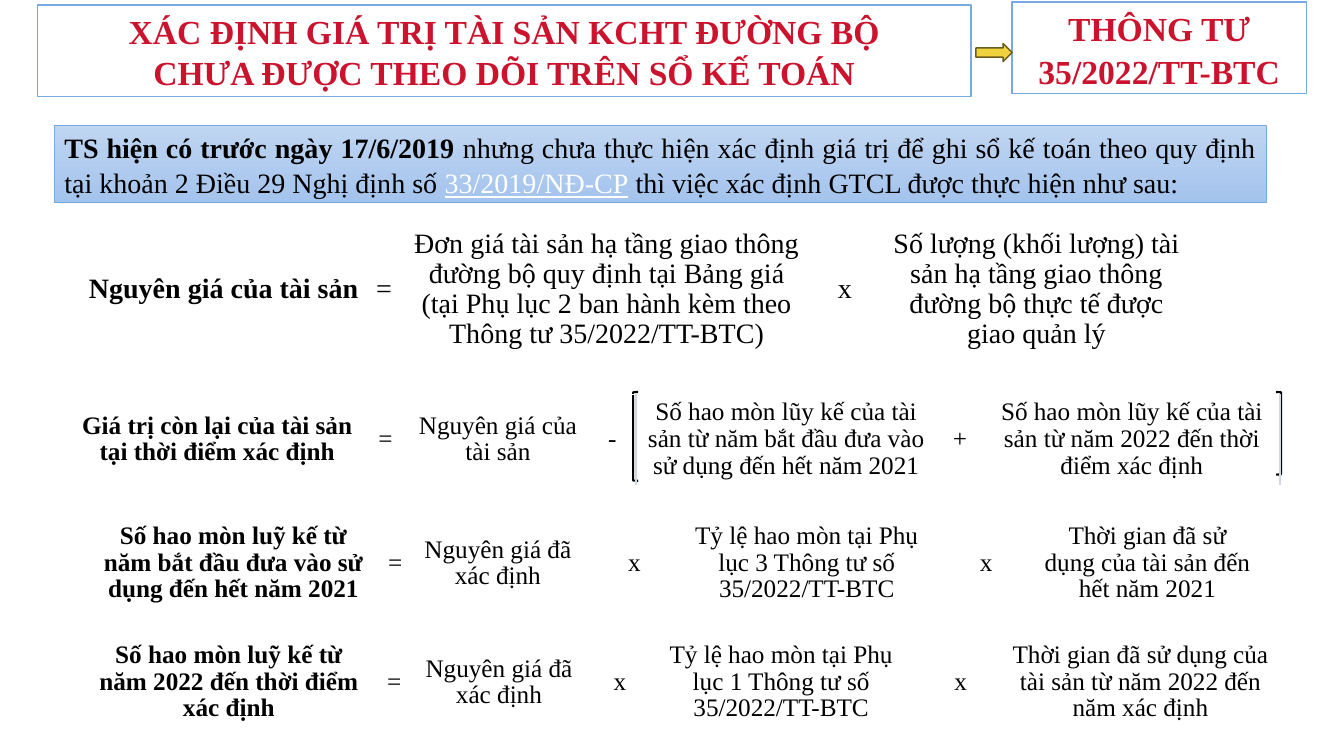
"""Build the slide on valuing road assets not yet recorded in the books."""
from lxml import etree
from pptx import Presentation
from pptx.dml.color import RGBColor
from pptx.enum import shapes, text
from pptx.oxml import ns
from pptx.util import Pt

HUES = {"red": "CB132E", "black": "000000", "white": "FFFFFF", "edge": "78AAE1",
        "top": "BFD5F1", "low": "A4C4ED", "gold": "F0D23F", "brown": "695C1C",
        "rule": "D0D7E5"}
KIND = shapes.MSO_SHAPE
ALIGN = text.PP_ALIGN


def hue(name):
    return RGBColor.from_string(HUES[name])


def write(para, words, size=18, bold=False, color="black", under=False,
          align=ALIGN.CENTER, gap=0, pitch=1.0):
    para.alignment = align
    para.space_before = para.space_after = Pt(gap)
    para.line_spacing = pitch
    run = para.add_run()
    run.text = words
    font = run.font
    font.name, font.size = "Times New Roman", Pt(size)
    font.bold, font.underline = bold, under
    font.color.rgb = hue(color)


deck = Presentation()
deck.slide_width, deck.slide_height = Pt(960), Pt(540)
slide = deck.slides.add_slide(deck.slide_layouts[5])

title = slide.shapes.title
title.left, title.top, title.width, title.height = Pt(26.8), Pt(3.5), Pt(666.7), Pt(65.5)

marks = {}
for name, kind, left, top, width, height, fill, line, weight in [
    ("banner", KIND.RECTANGLE, 38.9, 89.3, 865.4, 55.5, None, "edge", 0.5),
    ("decree", KIND.RECTANGLE, 722.9, 1.5, 210.2, 65.5, "white", "edge", 1),
    ("arrow", KIND.RIGHT_ARROW, 697, 31, 26, 13, "gold", "brown", 1),
    ("open", KIND.LEFT_BRACKET, 452.2, 280, 3.6, 63.4, None, "black", 1.5),
    ("close", KIND.RIGHT_BRACKET, 911.5, 280, 3.6, 59, None, "black", 1.5),
]:
    mark = slide.shapes.add_shape(kind, Pt(left), Pt(top), Pt(width), Pt(height))
    mark.shadow.inherit = False
    if fill:
        mark.fill.solid()
        mark.fill.fore_color.rgb = hue(fill)
    else:
        mark.fill.background()
    mark.line.color.rgb = hue(line)
    mark.line.width = Pt(weight)
    marks[name] = mark

banner = marks["banner"]
banner.fill.gradient()
banner.fill.gradient_angle = 270
for stop, name in zip(banner.fill.gradient_stops, ["top", "low"]):
    stop.color.rgb = hue(name)

title.fill.solid()
title.fill.fore_color.rgb = hue("white")
title.line.color.rgb = hue("edge")
title.line.width = Pt(1)
for shape in (title, banner, marks["decree"]):
    frame = shape.text_frame
    frame.word_wrap = True
    frame.auto_size = text.MSO_AUTO_SIZE.NONE
    frame.vertical_anchor = text.MSO_ANCHOR.MIDDLE
    frame.margin_left = frame.margin_right = Pt(7.2)
    frame.margin_top = frame.margin_bottom = Pt(3.6)

head = title.text_frame
write(head.paragraphs[0], "XÁC ĐỊNH GIÁ TRỊ TÀI SẢN KCHT ĐƯỜNG BỘ",
      size=24, bold=True, color="red", pitch=1.04)
write(head.add_paragraph(), "CHƯA ĐƯỢC THEO DÕI TRÊN SỔ KẾ TOÁN",
      size=24, bold=True, color="red", pitch=1.04)
write(marks["decree"].text_frame.paragraphs[0], "THÔNG TƯ 35/2022/TT-BTC",
      size=24, bold=True, color="red", pitch=1.07)
for words, look in [
    ("TS hiện có trước ngày 17/6/2019 ", {"bold": True}),
    ("nhưng chưa thực hiện xác định giá trị để ghi sổ kế toán theo quy định "
     "tại khoản 2 Điều 29 Nghị định số ", {}),
    ("33/2019/NĐ-CP", {"color": "white", "under": True}),
    (" thì việc xác định GTCL được thực hiện như sau:", {}),
]:
    write(banner.text_frame.paragraphs[0], words, size=20, align=ALIGN.JUSTIFY,
          pitch=1.06, **look)

sums = [
    (61.9, 159.1, 95.8, [195.8, 33.1, 285.1, 55.4, 218.2], (0, 0),
     {"size": 20, "gap": 6, "pitch": 0.96},
     ["Nguyên giá của tài sản ", "=",
      "Đơn giá tài sản hạ tầng giao thông đường bộ quy định tại Bảng giá "
      "(tại Phụ lục 2 ban hành kèm theo Thông tư 35/2022/TT-BTC)", "x",
      "Số lượng (khối lượng) tài sản hạ tầng giao thông đường bộ "
      "thực tế được giao quản lý"], {}),
    (50.4, 281.5, 64.8, [209.5, 31, 129.6, 33.8, 214.6, 33.8, 211.7], (5, 0),
     {"gap": 6, "pitch": 0.96},
     ["Giá trị còn lại của tài sản tại thời điểm xác định", "=",
      "Nguyên giá của tài sản", "-",
      "Số hao mòn lũy kế của tài sản từ năm bắt đầu đưa vào sử dụng "
      "đến hết năm 2021", "+",
      "Số hao mòn lũy kế của tài sản từ năm 2022 đến thời điểm xác định"],
     {3: "a:lnR", 4: "a:lnL", 6: "a:lnR"}),
    (63.4, 366.5, 72, [206.6, 16.6, 136.8, 58.3, 187.9, 68.4, 162], (7.2, 3.6),
     {"pitch": 0.95},
     ["Số hao mòn luỹ kế từ năm bắt đầu đưa vào sử dụng đến hết năm 2021", "=",
      "Nguyên giá đã xác định", "x",
      "Tỷ lệ hao mòn tại Phụ lục 3 Thông tư số 35/2022/TT-BTC", "x",
      "Thời gian đã sử dụng của tài sản đến hết năm 2021"], {}),
    (57.6, 451.4, 72, [211.7, 17.3, 139.7, 33.1, 197.3, 59, 198], (7.2, 3.6),
     {"pitch": 0.95},
     ["Số hao mòn luỹ kế từ năm 2022 đến thời điểm xác định", "=",
      "Nguyên giá đã xác định", "x",
      "Tỷ lệ hao mòn tại Phụ lục 1 Thông tư số 35/2022/TT-BTC", "x",
      "Thời gian đã sử dụng của tài sản từ năm 2022 đến năm xác định"], {}),
]
for left, top, height, widths, (side, edge), look, terms, rules in sums:
    table = slide.shapes.add_table(1, len(terms), Pt(left), Pt(top),
                                   Pt(sum(widths)), Pt(height)).table
    table.first_row = table.horz_banding = False
    for col, (width, term) in enumerate(zip(widths, terms)):
        table.columns[col].width = Pt(width)
        cell = table.cell(0, col)
        cell.vertical_anchor = text.MSO_ANCHOR.MIDDLE
        cell.margin_left = cell.margin_right = Pt(side)
        cell.margin_top = cell.margin_bottom = Pt(edge)
        write(cell.text_frame.paragraphs[0], term, bold=col == 0, **look)
        if col in rules:
            line = etree.SubElement(cell._tc.get_or_add_tcPr(), ns.qn(rules[col]),
                                    w=str(Pt(1)))
            paint = etree.SubElement(line, ns.qn("a:solidFill"))
            etree.SubElement(paint, ns.qn("a:srgbClr"), val=HUES["rule"])
        cell.fill.background()

deck.save("out.pptx")
